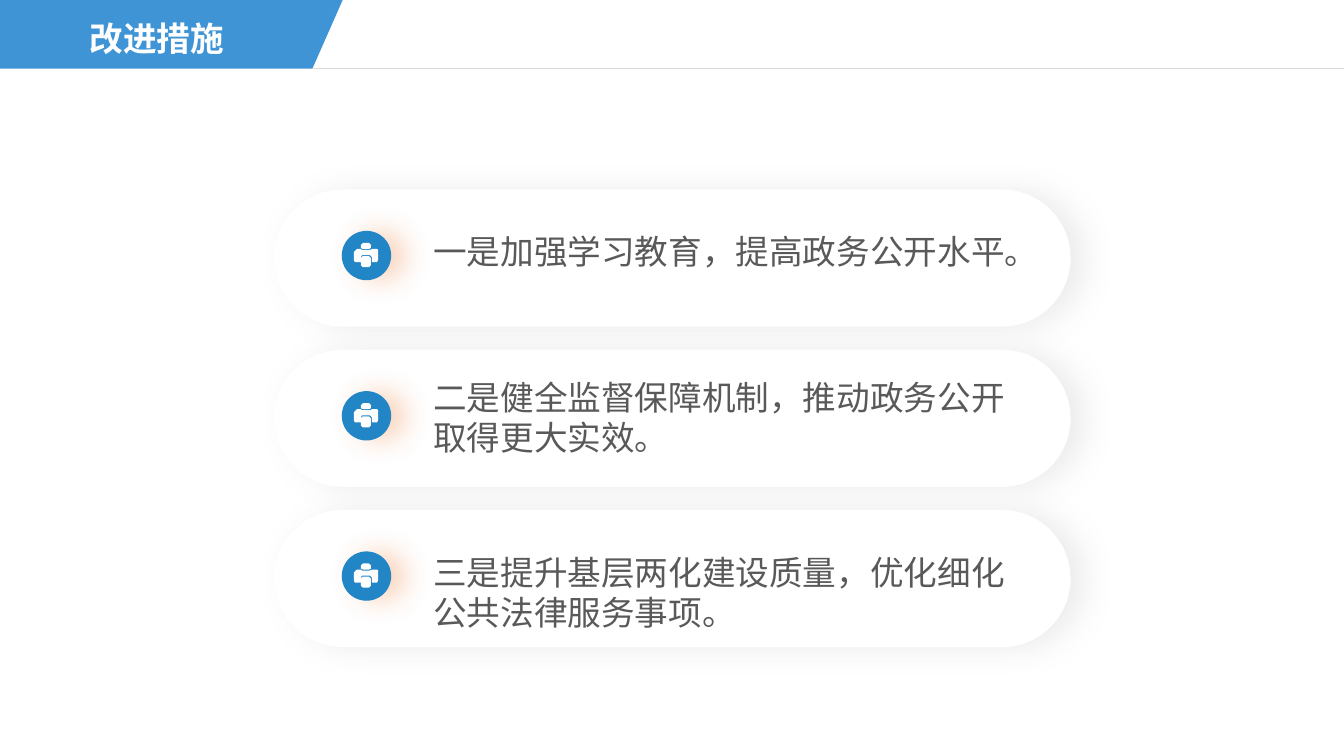
from lxml.etree import SubElement
from pptx import Presentation
from pptx.dml.color import RGBColor
from pptx.enum.shapes import MSO_CONNECTOR, MSO_SHAPE
from pptx.enum.text import MSO_ANCHOR, MSO_AUTO_SIZE, PP_ALIGN
from pptx.oxml.ns import qn
from pptx.util import Inches, Pt

WIDTH, HEIGHT = Inches(13.33), Inches(7.5)
FONT = "Noto Sans CJK SC"
COLOURS = {
    "banner": "3F94D5", "badge": "2285C5", "white": "FFFFFF", "rule": "D9D9D9",
    "text": "595959", "card_shadow": "A6A6A6", "badge_shadow": "ED7D31",
}
BANNER_HEIGHT, BANNER_TOP_EDGE, BANNER_LOW_EDGE = 9.07, 25.5, 23.25
CARD_LEFT, CARD_TOP, CARD_WIDTH, CARD_HEIGHT, CARD_PITCH = 20.4, 25.07, 59.26, 18.13, 21.2
MEASURES = [
    ("一是加强学习教育，提高政务公开水平。", 5.47, 5.4),
    ("二是健全监督保障机制，推动政务公开取得更大实效。", 3.6, 10.8),
    ("三是提升基层两化建设质量，优化细化公共法律服务事项。", 5.47, 10.8),
]
PRINTER_OUTLINES = [
    [(7, 2), (9, 0), (15, 0), (17, 2), (17, 5), (15, 6), (9, 6), (7, 5)],
    [(0, 9), (3, 6), (7, 6), (8, 7), (16, 7), (18, 6), (23, 6), (24, 7), (24, 17),
     (23, 19), (18, 19), (18, 14), (16, 12), (8, 12), (7, 14), (7, 19), (1, 19), (0, 17)],
    [(7, 15), (9, 13), (15, 13), (17, 15), (17, 22), (15, 24), (9, 24), (7, 22)],
]


def across(percent):
    """Return a percentage of the slide width."""
    return round(WIDTH * percent / 100)


def down(percent):
    """Return a percentage of the slide height."""
    return round(HEIGHT * percent / 100)


def area(left, top, width, height):
    """Return a box given in percentages of the slide."""
    return across(left), down(top), across(width), down(height)


def colour(name):
    """Look up a named colour."""
    return RGBColor.from_string(COLOURS[name])


def apply(target, values):
    """Set every attribute in a dict of format values."""
    for name, value in values.items():
        setattr(target, name, value)


def paint(shape, fill):
    """Give a shape a plain fill without line or shadow."""
    shape.shadow.inherit = False
    shape.fill.solid()
    shape.fill.fore_color.rgb = colour(fill)
    shape.line.fill.background()


def add_shadow(shape, name, opacity):
    """Add a soft shadow falling to the right."""
    effects = shape.element.spPr.find(qn("a:effectLst"))
    shadow = SubElement(effects, qn("a:outerShdw"), blurRad=str(Pt(20)),
                        dist=str(Pt(10)), dir="0", algn="l", rotWithShape="0")
    tint = SubElement(shadow, qn("a:srgbClr"), val=COLOURS[name])
    SubElement(tint, qn("a:alpha"), val=str(opacity * 1000))


def add_outline(shapes, outlines, left, top, scale, fill):
    """Draw closed polygons as one filled freeform."""
    builder = shapes.build_freeform(*outlines[0][0], scale=scale)
    for index, points in enumerate(outlines):
        if index:
            builder.move_to(*points[0])
        builder.add_line_segments(points[1:], close=True)
    paint(builder.convert_to_shape(left, top), fill)


def write(shape, text, fill, bold=False, alignment=PP_ALIGN.LEFT):
    """Write one formatted paragraph into a text shape."""
    frame = shape.text_frame
    apply(frame, {
        "margin_left": 0, "margin_top": 0, "margin_right": 0, "margin_bottom": 0,
        "word_wrap": True, "auto_size": MSO_AUTO_SIZE.NONE, "vertical_anchor": MSO_ANCHOR.TOP,
    })
    paragraph = frame.paragraphs[0]
    paragraph.alignment = alignment
    run = paragraph.add_run()
    run.text = text
    apply(run.font, {"name": FONT, "size": Pt(24), "bold": bold})
    run.font.color.rgb = colour(fill)
    SubElement(run.font._element, qn("a:ea"), typeface=FONT)


def add_header(slide, text):
    """Add the slanted banner, its rule and the title."""
    corners = [(0, 0), (across(BANNER_TOP_EDGE), 0),
               (across(BANNER_LOW_EDGE), down(BANNER_HEIGHT)), (0, down(BANNER_HEIGHT))]
    add_outline(slide.shapes, [corners], 0, 0, 1, "banner")
    rule = slide.shapes.add_connector(MSO_CONNECTOR.STRAIGHT, across(BANNER_LOW_EDGE),
                                      down(BANNER_HEIGHT), WIDTH, down(BANNER_HEIGHT))
    rule.line.color.rgb = colour("rule")
    rule.line.width = Pt(0.5)
    SubElement(rule.element.spPr, qn("a:effectLst"))
    title = slide.shapes.title
    apply(title, dict(zip(("left", "top", "width", "height"), area(2.25, 2.4, 18.83, 5.4))))
    write(title, text, "white", bold=True, alignment=PP_ALIGN.CENTER)
    rule.element.addnext(title.element)


def add_measure(slide, top, text, text_offset, text_height):
    """Add a rounded card with a printer badge and its text."""
    shapes = slide.shapes.add_group_shape().shapes
    card = shapes.add_shape(MSO_SHAPE.ROUNDED_RECTANGLE,
                            *area(CARD_LEFT, top, CARD_WIDTH, CARD_HEIGHT))
    card.adjustments[0] = 0.5
    paint(card, "white")
    add_shadow(card, "card_shadow", 20)
    badge = shapes.add_shape(MSO_SHAPE.OVAL, *area(25.43, top + 5.47, 3.68, 6.53))
    paint(badge, "badge")
    add_shadow(badge, "badge_shadow", 32)
    add_outline(shapes, PRINTER_OUTLINES, across(26.33), down(top + 7.07), Inches(0.01), "white")
    box = shapes.add_textbox(*area(32.24, top + text_offset, 43.66, text_height))
    write(box, text, "text")


def main():
    """Build and save the slide."""
    presentation = Presentation()
    apply(presentation, {"slide_width": WIDTH, "slide_height": HEIGHT})
    slide = presentation.slides.add_slide(presentation.slide_layouts[5])
    add_header(slide, "改进措施")
    for row, measure in enumerate(MEASURES):
        add_measure(slide, CARD_TOP + row * CARD_PITCH, *measure)
    presentation.save("out.pptx")


if __name__ == "__main__":
    main()
